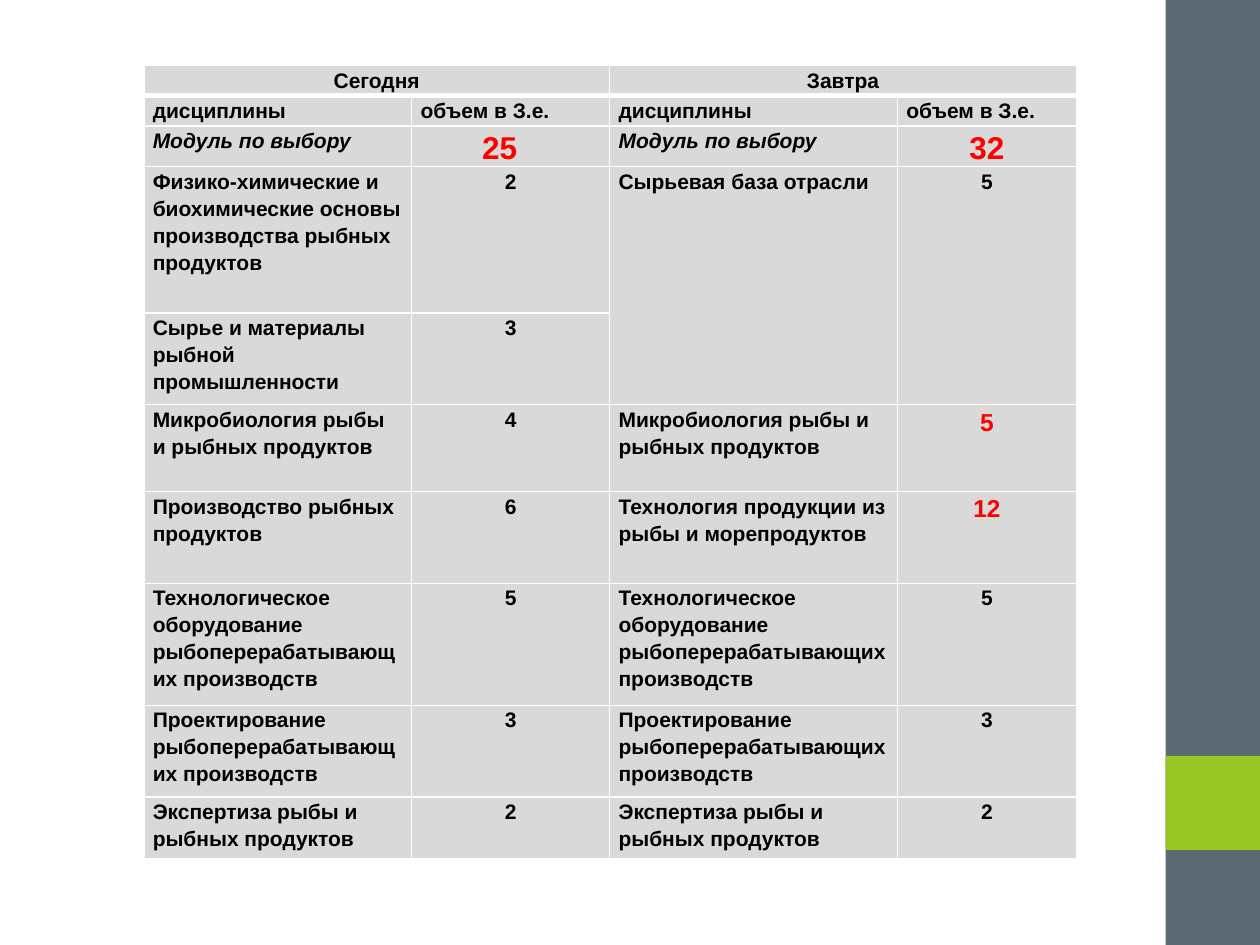
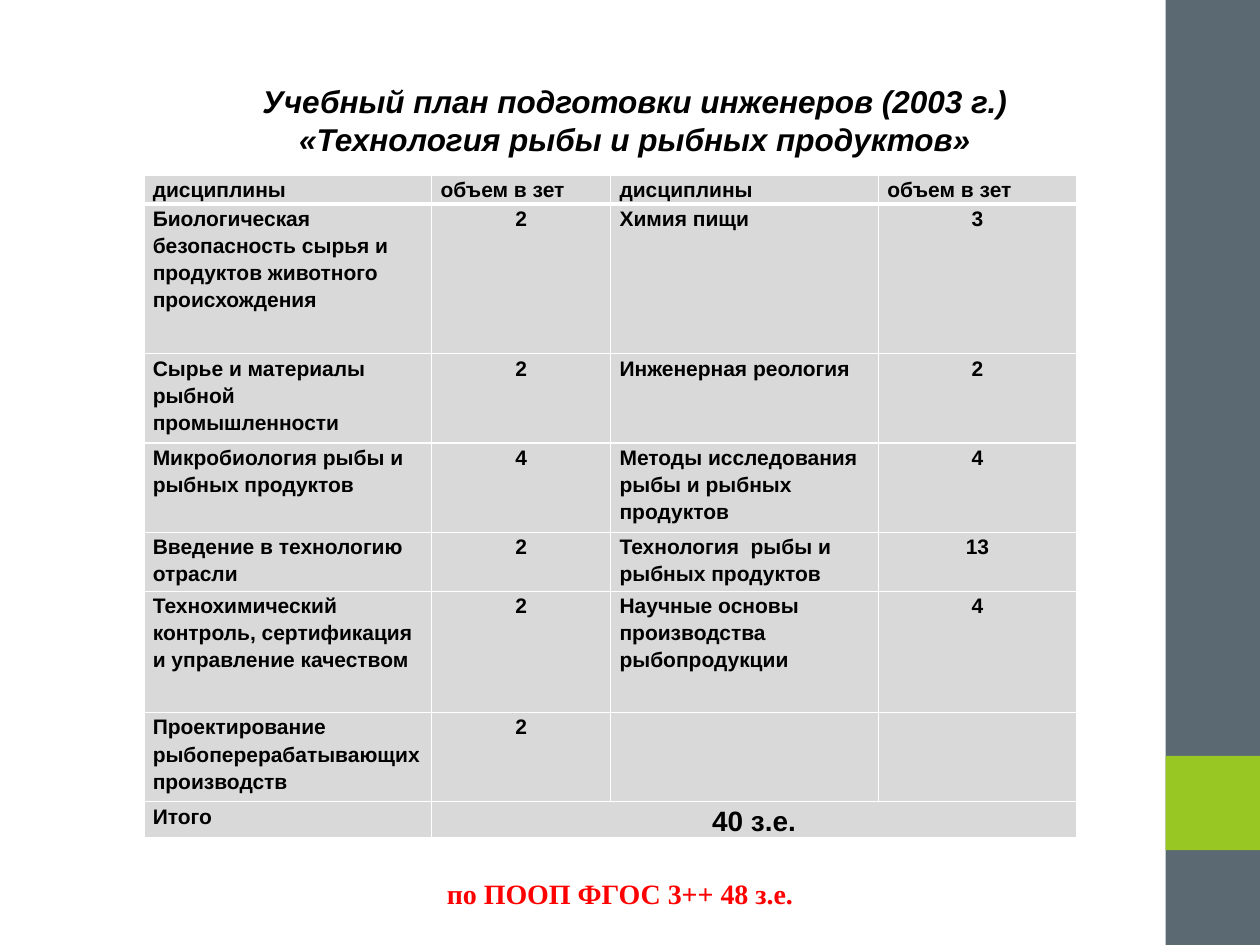
"""Build two slides that compare course plans in fish technology."""
from dataclasses import dataclass

from lxml import etree
from pptx import Presentation
from pptx.dml.color import RGBColor
from pptx.enum.shapes import MSO_SHAPE
from pptx.enum.text import MSO_ANCHOR, MSO_AUTO_SIZE, PP_ALIGN
from pptx.oxml.ns import qn
from pptx.util import Cm, Pt

RECT = MSO_SHAPE.RECTANGLE
TOP, MIDDLE = MSO_ANCHOR.TOP, MSO_ANCHOR.MIDDLE
LEFT, CENTER = PP_ALIGN.LEFT, PP_ALIGN.CENTER
NO_FIT = MSO_AUTO_SIZE.NONE
TITLE_ONLY, BLANK = 5, 6


@dataclass(frozen=True)
class Theme:
    slate: str = "5B6973"
    lime: str = "98C723"
    gray: str = "D9D9D9"
    white: str = "FFFFFF"
    black: str = "000000"
    red: str = "FF0000"
    sans: str = "Arial"
    serif: str = "Times New Roman"
    body: int = 12
    mid: int = 14
    large: int = 16
    head: int = 18
    thin: int = 1
    thick: int = 3


THEME = Theme()
BIG_RED = dict(size=THEME.head, color=THEME.red)
MID_RED = dict(size=THEME.mid, color=THEME.red)

MODULE = "Модуль по выбору"
MICRO = "Микробиология рыбы и рыбных продуктов"
RAW = "Сырье и материалы рыбной промышленности"
GEAR = "Технологическое оборудование рыбоперерабатывающих производств"
DESIGN = "Проектирование рыбоперерабатывающих производств"
EXPERT = "Экспертиза рыбы и рыбных продуктов"

CHANGE = [
    ["Сегодня", "", "Завтра", ""],
    ["дисциплины", "объем в З.е."] * 2,
    [MODULE, "25", MODULE, "32"],
    ["Физико-химические и биохимические основы производства рыбных продуктов", "2",
     "Сырьевая база отрасли", "5"],
    [RAW, "3", "", ""],
    [MICRO, "4", MICRO, "5"],
    ["Производство рыбных продуктов", "6",
     "Технология продукции из рыбы и морепродуктов", "12"],
    [GEAR, "5"] * 2,
    [DESIGN, "3"] * 2,
    [EXPERT, "2"] * 2,
]
CHANGE_LOOK = {
    (0, 0): dict(align=CENTER), (0, 2): dict(align=CENTER),
    (2, 0): dict(italic=True), (2, 2): dict(italic=True),
    (2, 1): dict(BIG_RED, align=LEFT, indent=Cm(1.24)), (2, 3): BIG_RED,
    (5, 3): MID_RED, (6, 3): MID_RED,
}

PLAN = [
    ["дисциплины", "объем в зет"] * 2,
    ["Биологическая безопасность сырья и продуктов животного происхождения", "2",
     "Химия пищи", "3"],
    [RAW, "2", "Инженерная реология", "2"],
    [MICRO, "4", "Методы исследования рыбы и рыбных продуктов", "4"],
    ["Введение в технологию отрасли", "2", "Технология  рыбы и рыбных продуктов", "13"],
    ["Технохимический контроль, сертификация и управление качеством", "2",
     "Научные основы производства рыбопродукции", "4"],
    [DESIGN, "2", "", ""],
    ["Итого", "40 з.е.", "", ""],
]
PLAN_LOOK = {(7, 1): dict(align=CENTER, size=THEME.large)}


def write(frame, words, size=THEME.body, color=THEME.black, font=THEME.sans,
          italic=False, align=LEFT, line=1.0, indent=0):
    """Fill a text frame, one paragraph to a line, in one format."""
    for i, part in enumerate(words.split("\n")):
        para = frame.add_paragraph() if i else frame.paragraphs[0]
        para.alignment = align
        para.line_spacing = line
        if indent:
            para._p.get_or_add_pPr().set("indent", str(indent))
        run = para.add_run()
        run.text = part
        run.font.name, run.font.size = font, Pt(size)
        run.font.bold, run.font.italic = True, italic
        run.font.color.rgb = RGBColor.from_string(color)


class Deck:
    """Hold the style and the current slide."""

    def __init__(self, theme):
        """Open an empty deck."""
        self.theme = theme
        self.prs = Presentation()
        self.prs.slide_width, self.prs.slide_height = Cm(25.4), Cm(19.05)
        self.slide = None

    def page(self, layout):
        """Start a slide with its side bands."""
        self.slide = self.prs.slides.add_slide(self.prs.slide_layouts[layout])
        self.band(0, 19.05, self.theme.slate)
        self.band(15.24, 1.9, self.theme.lime)

    def band(self, top, height, color):
        """Draw a band at the right edge."""
        shape = self.slide.shapes.add_shape(RECT, Cm(23.5), Cm(top), Cm(1.9), Cm(height))
        shape.shadow.inherit = False
        shape.fill.solid()
        shape.fill.fore_color.rgb = RGBColor.from_string(color)
        shape.line.fill.background()

    def title(self, words):
        """Place and fill the title."""
        shape = self.slide.shapes.title
        shape.left, shape.top, shape.width, shape.height = Cm(2.1), Cm(1.52), Cm(21.4), Cm(1.8)
        frame = shape.text_frame
        frame.auto_size, frame.vertical_anchor = NO_FIT, TOP
        write(frame, words, size=self.theme.head, italic=True, align=CENTER)

    def note(self, words):
        """Add the red line below the table."""
        box = self.slide.shapes.add_textbox(Cm(3.1), Cm(17.53), Cm(18.8), Cm(0.94))
        frame = box.text_frame
        frame.word_wrap, frame.vertical_anchor = True, MIDDLE
        write(frame, words, size=self.theme.large, color=self.theme.red,
              font=self.theme.serif, align=CENTER)

    def edge(self, cell, side, width):
        """Draw one white cell border."""
        line = etree.SubElement(cell._tc.get_or_add_tcPr(), qn(f"a:ln{side}"), w=str(Pt(width)))
        fill = etree.SubElement(line, qn("a:solidFill"))
        etree.SubElement(fill, qn("a:srgbClr"), val=self.theme.white)

    def table(self, top, cols, rows, data, look, spans):
        """Add a gray table with a heavy rule below its first row."""
        theme = self.theme
        grid = self.slide.shapes.add_table(len(rows), len(cols), Cm(2.9), Cm(top),
                                           Cm(sum(cols)), Cm(sum(rows))).table
        for col, width in zip(grid.columns, cols):
            col.width = Cm(width)
        for row, height in zip(grid.rows, rows):
            row.height = Cm(height)
        for r, line in enumerate(data):
            for c, words in enumerate(line):
                cell = grid.cell(r, c)
                heavy = {0: "B", 1: "T"}.get(r)
                for side in "LRTB":
                    self.edge(cell, side, theme.thick if side == heavy else theme.thin)
                cell.fill.solid()
                cell.fill.fore_color.rgb = RGBColor.from_string(theme.gray)
                cell.margin_left = cell.margin_right = Cm(0.18)
                cell.margin_top = cell.margin_bottom = 0
                if words:
                    base = dict(line=1.15, align=CENTER if words.isdigit() else LEFT)
                    write(cell.text_frame, words, **{**base, **look.get((r, c), {})})
        for start, end in spans:
            grid.cell(*start).merge(grid.cell(*end))


def main():
    """Build and save the deck."""
    deck = Deck(THEME)

    deck.page(BLANK)
    deck.table(1.32, [5.4, 3.99, 5.8, 3.61],
               [0.61, 0.61, 0.81, 2.95, 1.85, 1.75, 1.85, 2.46, 1.85, 1.24],
               CHANGE, CHANGE_LOOK,
               [((0, 0), (0, 1)), ((0, 2), (0, 3)), ((3, 2), (4, 2)), ((3, 3), (4, 3))])

    deck.page(TITLE_ONLY)
    deck.table(3.53, [5.8, 3.61, 5.4, 3.99],
               [0.58, 3.02, 1.8, 1.8, 1.19, 2.44, 1.8, 0.73],
               PLAN, PLAN_LOOK, [((7, 1), (7, 3))])
    deck.note("по ПООП ФГОС 3++ 48 з.е.")
    deck.title("Учебный план подготовки инженеров (2003 г.)\n"
               "«Технология рыбы и рыбных продуктов»")

    deck.prs.save("out.pptx")


if __name__ == "__main__":
    main()
